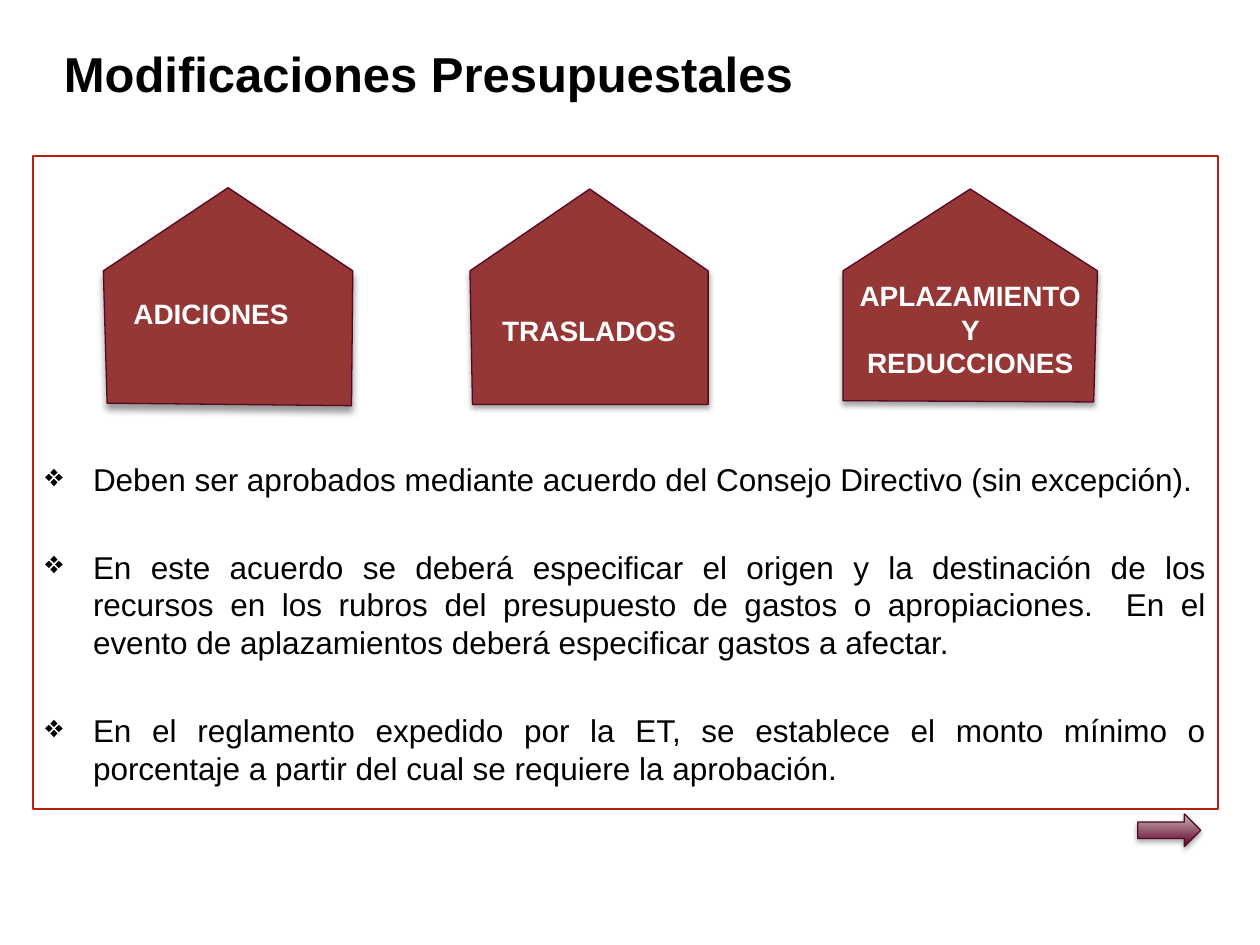
from lxml import etree
from pptx import Presentation
from pptx.dml.color import RGBColor
from pptx.enum.shapes import MSO_SHAPE
from pptx.enum.text import MSO_ANCHOR, PP_ALIGN
from pptx.oxml.ns import qn
from pptx.util import Inches, Pt

RECT = MSO_SHAPE.RECTANGLE
ARROW = MSO_SHAPE.RIGHT_ARROW
TOP, MIDDLE = MSO_ANCHOR.TOP, MSO_ANCHOR.MIDDLE
LEFT, CENTER, JUSTIFY = PP_ALIGN.LEFT, PP_ALIGN.CENTER, PP_ALIGN.JUSTIFY
BLACK, WHITE, RED, BRICK, PLUM = "000000", "FFFFFF", "B81E0E", "953735", "540828"

TITLE = "Modificaciones Presupuestales"
RULES = [
    "Deben ser aprobados mediante acuerdo del Consejo Directivo (sin excepción).",
    "En este acuerdo se deberá especificar el origen y la destinación de los "
    "recursos en los rubros del presupuesto de gastos o apropiaciones.  En el "
    "evento de aplazamientos deberá especificar gastos a afectar.",
    "En el reglamento expedido por la ET, se establece el monto mínimo o "
    "porcentaje a partir del cual se requiere la aprobación.",
]
HOUSES = [
    ("ADICIONES", [(0.82, 2.15), (1.81, 1.49), (2.8, 2.15), (2.79, 3.22), (0.85, 3.2)],
     (0.32, 0.37), (40, 4, 3)),
    ("TRASLADOS", [(3.73, 2.15), (4.68, 1.5), (5.62, 2.15), (5.62, 3.21), (3.75, 3.21)],
     (0.58, 0.1), (35, 3.1, 1.8)),
    ("APLAZAMIENTO Y REDUCCIONES",
     [(6.69, 2.15), (7.7, 1.5), (8.71, 2.15), (8.68, 3.19), (6.69, 3.18)],
     (0.58, 0.1), (35, 3.1, 1.8)),
]


def color(code):
    return RGBColor.from_string(code)


class Deck:
    font = "Arial"

    def __init__(self):
        self.prs = Presentation()
        self.prs.slide_width, self.prs.slide_height = Inches(10), Inches(7.5)
        self.slide = self.prs.slides.add_slide(self.prs.slide_layouts[6])

    def border(self, shape, code, width):
        shape.line.color.rgb = color(code)
        shape.line.width = Pt(width)
        shape.shadow.inherit = False

    def shade(self, shape, alpha, blur, dist):
        effect = shape._element.spPr.find(qn("a:effectLst"))
        outer = etree.SubElement(effect, qn("a:outerShdw"), blurRad=str(Pt(blur)),
                                 dist=str(Pt(dist)), dir="5400000", rotWithShape="0")
        tint = etree.SubElement(outer, qn("a:srgbClr"), val=BLACK)
        etree.SubElement(tint, qn("a:alpha"), val=str(alpha * 1000))

    def label(self, shape, lines, size, code, bold, align, anchor, top=0.05, right=0.1,
              gap=0, mark=None):
        frame = shape.text_frame
        frame.word_wrap = True
        frame.vertical_anchor = anchor
        frame.margin_left, frame.margin_right = Inches(0.1), Inches(right)
        frame.margin_top, frame.margin_bottom = Inches(top), Inches(0.05)
        for num, line in enumerate(lines):
            para = frame.add_paragraph() if num else frame.paragraphs[0]
            para.alignment = align
            if num:
                para.space_before = Pt(gap)
            if mark:
                props = para._p.get_or_add_pPr()
                props.set("marL", str(Inches(0.38)))
                props.set("indent", str(-Inches(0.38)))
                etree.SubElement(props, qn("a:buChar"), char=mark)
            run = para.add_run()
            run.text = line
            run.font.name, run.font.size = self.font, Pt(size)
            run.font.bold = bold
            run.font.color.rgb = color(code)

    def title(self, text, *box):
        shape = self.slide.shapes.add_textbox(*map(Inches, box))
        self.label(shape, [text], 28, BLACK, True, LEFT, MIDDLE)

    def panel(self, lines, *box):
        shape = self.slide.shapes.add_shape(RECT, *map(Inches, box))
        shape.fill.background()
        self.border(shape, RED, 1)
        self.label(shape, lines, 18, BLACK, False, JUSTIFY, TOP, top=2.41, gap=28.5,
                   mark="❖")

    def house(self, text, points, inset, shadow):
        first, *rest = [(Inches(x), Inches(y)) for x, y in points]
        pen = self.slide.shapes.build_freeform(*first)
        pen.add_line_segments(rest, close=True)
        shape = pen.convert_to_shape()
        shape.fill.solid()
        shape.fill.fore_color.rgb = color(BRICK)
        self.border(shape, PLUM, 0.75)
        self.shade(shape, *shadow)
        top, right = inset
        self.label(shape, [text], 16, WHITE, True, CENTER, MIDDLE, top, right)

    def arrow(self, *box):
        shape = self.slide.shapes.add_shape(ARROW, *map(Inches, box))
        shape.fill.gradient()
        shape.fill.gradient_angle = 90
        stops = zip(shape.fill.gradient_stops, ("5E0027", "CBB5B9"), (0, 1))
        for stop, code, place in stops:
            stop.color.rgb = color(code)
            stop.position = place
        self.border(shape, PLUM, 0.75)
        self.shade(shape, 35, 3.1, 1.8)


def main():
    deck = Deck()
    deck.panel(RULES, 0.26, 1.24, 9.41, 5.18)
    for house in HOUSES:
        deck.house(*house)
    deck.arrow(9.03, 6.46, 0.5, 0.26)
    deck.title(TITLE, 0.41, 0.13, 9, 0.9)
    deck.prs.save("out.pptx")


if __name__ == "__main__":
    main()
